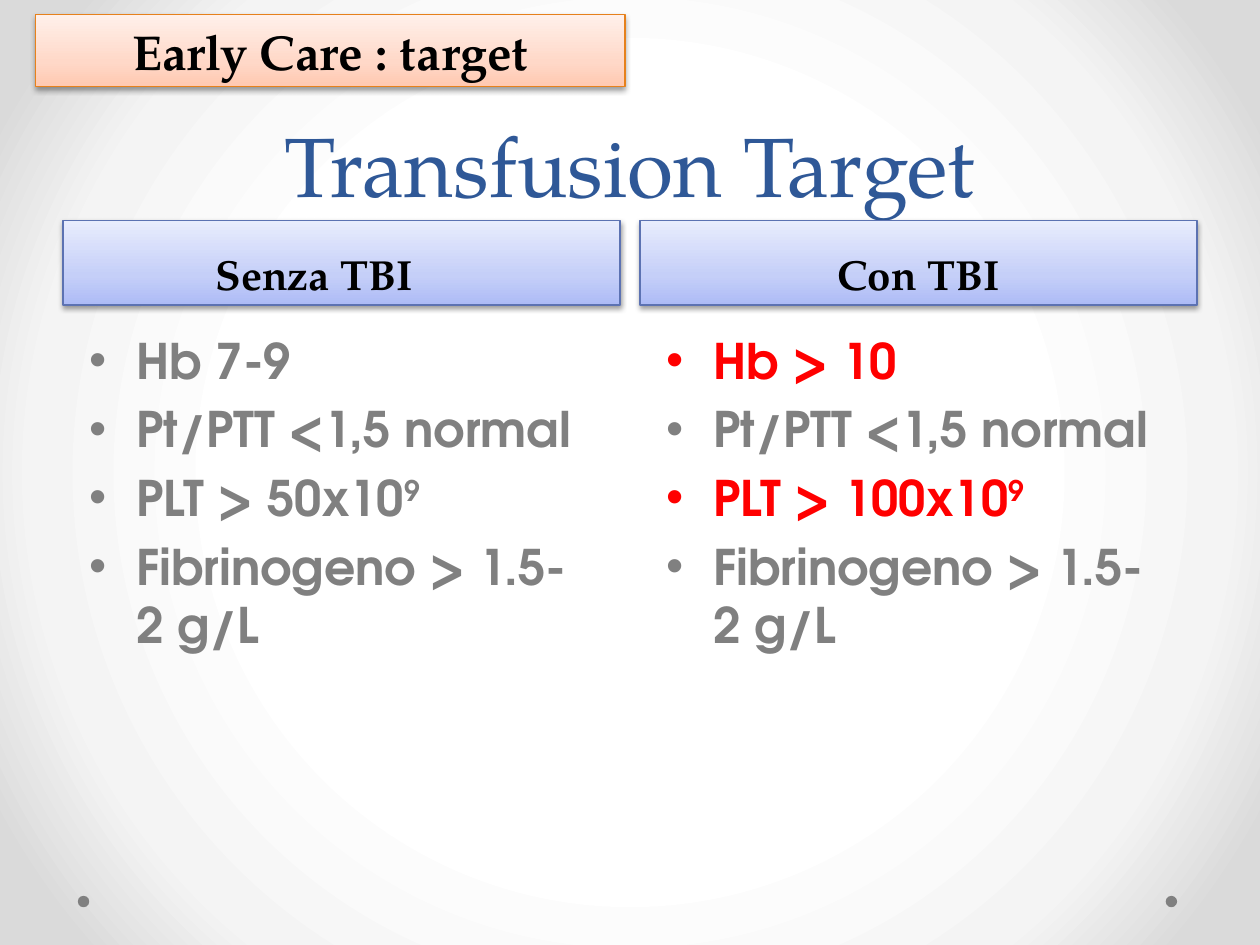
from dataclasses import dataclass

from lxml import etree
from pptx import Presentation
from pptx import util as u
from pptx.dml.color import RGBColor
from pptx.enum import shapes, text
from pptx.oxml import ns

COLORS = {"title": "2F5897", "black": "000000", "grey": "808080", "red": "FF0000",
          "blue_line": "5C72B2", "orange_line": "E6811C"}
BLUE_STOPS = [(0, "ADBBF6"), (35, "C5CFF8"), (100, "E8ECFD")]
ORANGE_STOPS = [(0, "FFC9B1"), (35, "FFD8C8"), (100, "FFF0EA")]
BACKDROP_STOPS = [(50, "FFFFFF"), (76, "F4F4F4"), (92, "DADADA")]
SERIF, SANS = "TeX Gyre Pagella", "TeX Gyre Adventor"


@dataclass
class Target:
    label: str
    exponent: str = ""
    color: str = "grey"


@dataclass
class Column:
    left: float
    heading: str
    targets: list[Target]


CLOTTING = Target("Pt/PTT <1,5 normal")
FIBRINOGEN = Target("Fibrinogeno > 1.5-2 g/L")
COLUMNS = [
    Column(1.27, "Senza TBI\t",
           [Target("Hb 7-9"), CLOTTING, Target("PLT > 50x10", "9"), FIBRINOGEN]),
    Column(12.9, "Con TBI",
           [Target("Hb > 10", color="red"), CLOTTING,
            Target("PLT > 100x10", "9", "red"), FIBRINOGEN]),
]


def add_node(parent, tag: str, **attributes):
    return etree.SubElement(parent, ns.qn(tag), {k: str(v) for k, v in attributes.items()})


def set_gradient(owner, fill, stops: list, radial: bool = False) -> None:
    """Fill a shape from bottom to top, or a background from the centre out."""
    fill.gradient()
    gradient = owner.element.find(".//" + ns.qn("a:gradFill"))
    for child in list(gradient):
        gradient.remove(child)
    stop_list = add_node(gradient, "a:gsLst")
    for position, color in stops:
        add_node(add_node(stop_list, "a:gs", pos=position * 1000), "a:srgbClr", val=color)
    if radial:
        add_node(add_node(gradient, "a:path", path="circle"), "a:fillToRect",
                 l=50000, t=50000, r=50000, b=50000)
    else:
        add_node(gradient, "a:lin", ang=270 * 60000, scaled=0)


def add_shadow(shape) -> None:
    shape.shadow.inherit = False
    effects = shape.element.spPr.find(ns.qn("a:effectLst"))
    outer = add_node(effects, "a:outerShdw", blurRad=u.Pt(3.1), dist=u.Pt(1.6),
                     dir=90 * 60000, rotWithShape=0)
    add_node(add_node(outer, "a:srgbClr", val=COLORS["black"]), "a:alpha", val=38000)


def add_run(paragraph, words: str, *, size: float, font: str, color: str,
            bold: bool = True, superscript: bool = False) -> None:
    run = paragraph.add_run()
    run.text = words
    run.font.size, run.font.name, run.font.bold = u.Pt(size), font, bold
    run.font.color.rgb = RGBColor.from_string(COLORS[color])
    if superscript:
        run.font._element.set("baseline", "30000")


def add_banner(slide, box: tuple, words: str, stops: list, line: str, *,
               size: float, anchor) -> None:
    banner = slide.shapes.add_shape(shapes.MSO_SHAPE.RECTANGLE, *map(u.Cm, box))
    set_gradient(banner, banner.fill, stops)
    banner.line.color.rgb = RGBColor.from_string(COLORS[line])
    banner.line.width = u.Pt(0.75)
    add_shadow(banner)
    frame = banner.text_frame
    frame.word_wrap, frame.vertical_anchor = True, anchor
    frame.paragraphs[0].alignment = text.PP_ALIGN.CENTER
    add_run(frame.paragraphs[0], words, size=size, font=SERIF, color="black")


def add_targets(slide, left: float, targets: list[Target]) -> None:
    frame = slide.shapes.add_textbox(u.Cm(left), u.Cm(6.53), u.Cm(10.67), u.Cm(9.98)).text_frame
    frame.word_wrap = True
    for index, target in enumerate(targets):
        paragraph = frame.add_paragraph() if index else frame.paragraphs[0]
        properties = paragraph._p.get_or_add_pPr()
        properties.set("marL", str(u.Cm(0.95)))
        properties.set("indent", str(-u.Cm(0.95)))
        add_node(properties, "a:buFont", typeface="Arial")
        add_node(properties, "a:buChar", char="•")
        if index:
            paragraph.space_before = u.Pt(5.6)
        style = dict(size=28, font=SANS, color=target.color)
        add_run(paragraph, target.label, **style)
        if target.exponent:
            add_run(paragraph, target.exponent, superscript=True, **style)


def main() -> None:
    deck = Presentation()
    deck.slide_width, deck.slide_height = u.Cm(25.4), u.Cm(19.05)
    slide = deck.slides.add_slide(deck.slide_layouts[6])

    # Backdrop and corner dots
    set_gradient(slide, slide.background.fill, BACKDROP_STOPS, radial=True)
    for left in (23.5, 1.57):
        dot = slide.shapes.add_shape(shapes.MSO_SHAPE.OVAL, u.Cm(left), u.Cm(18.06),
                                     u.Cm(0.23), u.Cm(0.23))
        dot.shadow.inherit = False
        dot.fill.solid()
        dot.fill.fore_color.rgb = RGBColor.from_string(COLORS["grey"])
        dot.line.fill.background()

    # Title
    title = slide.shapes.add_textbox(u.Cm(1.27), 0, u.Cm(22.86), u.Cm(4.45)).text_frame
    title.word_wrap, title.vertical_anchor = True, text.MSO_ANCHOR.BOTTOM
    title.paragraphs[0].alignment = text.PP_ALIGN.CENTER
    title.paragraphs[0].line_spacing = u.Pt(58)
    add_run(title.paragraphs[0], "Transfusion Target", size=48, font=SERIF,
            color="title", bold=False)

    # Two columns of targets
    for column in COLUMNS:
        add_banner(slide, (column.left, 4.45, 11.23, 1.7), column.heading, BLUE_STOPS,
                   "blue_line", size=24, anchor=text.MSO_ANCHOR.BOTTOM)
        add_targets(slide, column.left + 0.28, column.targets)

    # Section label
    add_banner(slide, (0.71, 0.3, 11.89, 1.45), "Early Care : target", ORANGE_STOPS,
               "orange_line", size=28, anchor=text.MSO_ANCHOR.TOP)

    deck.save("out.pptx")


if __name__ == "__main__":
    main()
